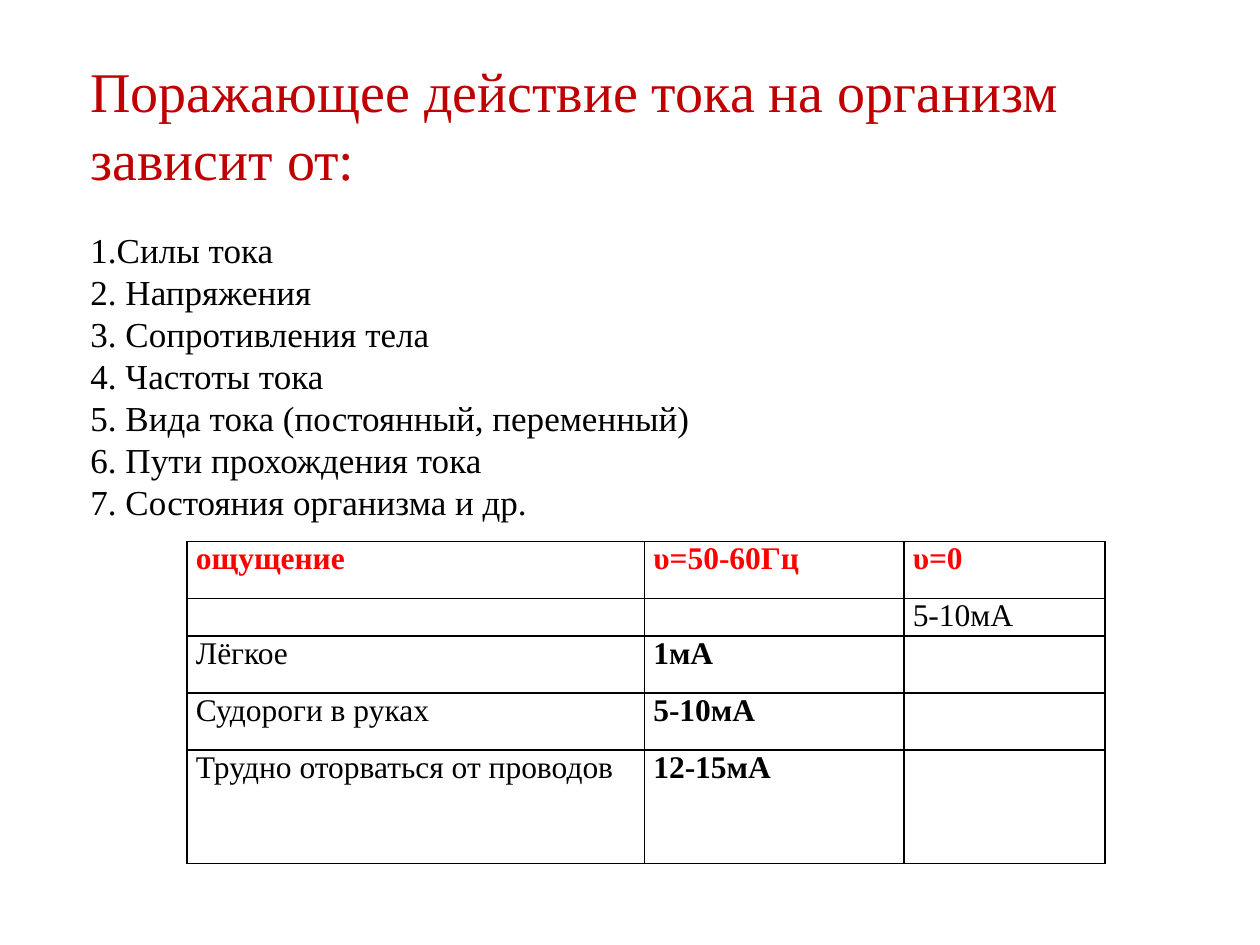
import pptx
import pptx.util
import pptx.dml.color
import pptx.enum.text
import pptx.oxml
import pptx.oxml.ns
from pptx.util import Cm

FONT = "Times New Roman"
RED, DARK_RED, BLACK, WHITE = "FF0000", "C00000", "000000", "FFFFFF"
FACTORS = [
    "1.Силы тока",
    "2. Напряжения",
    "3. Сопротивления тела",
    "4. Частоты тока",
    "5. Вида тока (постоянный, переменный)",
    "6. Пути прохождения тока",
    "7. Состояния организма и др.",
]
EFFECTS = [
    ["ощущение", "υ=50-60Гц", "υ=0"],
    ["", "", "5-10мА"],
    ["Лёгкое", "1мА", ""],
    ["Судороги в руках", "5-10мА", ""],
    ["Трудно оторваться от проводов", "12-15мА", ""],
]
COL_WIDTHS = [9.22, 5.23, 4.06]
ROW_HEIGHTS = [1.15, 0.75, 1.15, 1.15, 2.29]


def rgb(color):
    return pptx.dml.color.RGBColor.from_string(color)


def write(p, text, size=18, color=BLACK, bold=False, spacing=None):
    p.alignment = pptx.enum.text.PP_ALIGN.LEFT
    p.space_before = p.space_after = pptx.util.Pt(0)
    if spacing:
        p.line_spacing = pptx.util.Pt(spacing)
    r = p.add_run()
    r.text = text
    r.font.name = FONT
    r.font.size = pptx.util.Pt(size)
    r.font.bold = bold
    r.font.color.rgb = rgb(color)


def place(sp, left, top, width, height):
    sp.left, sp.top, sp.width, sp.height = Cm(left), Cm(top), Cm(width), Cm(height)
    tf = sp.text_frame
    tf.word_wrap = True
    tf.auto_size = pptx.enum.text.MSO_AUTO_SIZE.NONE
    tf.vertical_anchor = pptx.enum.text.MSO_ANCHOR.TOP
    return tf


def add_title(s, left, top, width, height):
    tf = place(s.shapes.title, left, top, width, height)
    write(tf.paragraphs[0], "Поражающее действие тока на организм зависит от:",
          size=32, color=DARK_RED, spacing=38.4)


def add_factors(s, left, top, width, height):
    tf = place(s.placeholders[1], left, top, width, height)
    for i, factor in enumerate(FACTORS):
        p = tf.add_paragraph() if i else tf.paragraphs[0]
        write(p, factor, size=20, spacing=24)
        pPr = p._p.get_or_add_pPr()
        pPr.set("marL", "0")
        pPr.set("indent", "0")
        pPr.append(pptx.oxml.parse_xml(f'<a:buNone {pptx.oxml.ns.nsdecls("a")}/>'))


def set_borders(cell, color, width):
    tcPr = cell._tc.get_or_add_tcPr()
    for i, side in enumerate(("lnL", "lnR", "lnT", "lnB")):
        tcPr.insert(i, pptx.oxml.parse_xml(
            f'<a:{side} {pptx.oxml.ns.nsdecls("a")} w="{pptx.util.Pt(width)}">'
            f'<a:solidFill><a:srgbClr val="{color}"/></a:solidFill></a:{side}>'))


def add_effects(s, left, top):
    table = s.shapes.add_table(
        len(ROW_HEIGHTS), len(COL_WIDTHS), Cm(left), Cm(top),
        Cm(sum(COL_WIDTHS)), Cm(sum(ROW_HEIGHTS))).table
    table.first_row = table.horz_banding = False
    for col, width in zip(table.columns, COL_WIDTHS):
        col.width = Cm(width)
    for i, (row, height) in enumerate(zip(table.rows, ROW_HEIGHTS)):
        row.height = Cm(height)
        for j, cell in enumerate(row.cells):
            cell.margin_left = cell.margin_right = Cm(0.18)
            cell.margin_top = cell.margin_bottom = 0
            cell.fill.solid()
            cell.fill.fore_color.rgb = rgb(WHITE)
            set_borders(cell, BLACK, 1)
            write(cell.text_frame.paragraphs[0], EFFECTS[i][j],
                  color=BLACK if i else RED, bold=i == 0 or j == 1)


def main():
    prs = pptx.Presentation()
    prs.slide_width, prs.slide_height = Cm(25.4), Cm(19.05)
    s = prs.slides.add_slide(prs.slide_layouts[1])
    add_title(s, 1.57, 1.02, 22.43, 3.45)
    add_factors(s, 1.57, 4.47, 22.43, 6.27)
    add_effects(s, 3.77, 10.92)
    prs.save("out.pptx")


if __name__ == "__main__":
    main()
